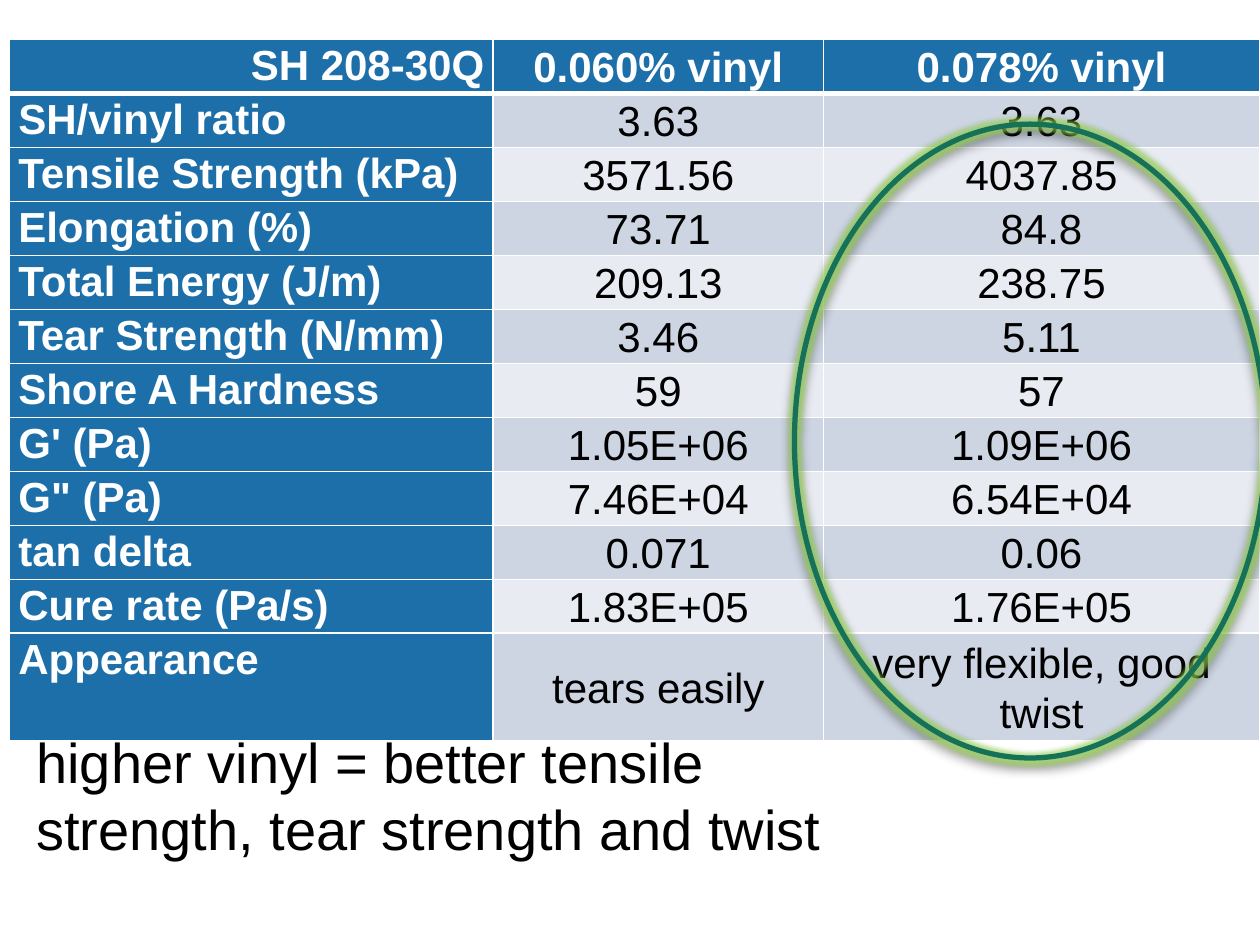
import pptx
import pptx.util
import pptx.oxml
import pptx.oxml.ns
import pptx.dml.color
import pptx.enum.shapes
import pptx.enum.text

Pt = pptx.util.Pt
Color = pptx.dml.color.RGBColor
Align = pptx.enum.text.PP_ALIGN
Anchor = pptx.enum.text.MSO_ANCHOR

WHITE = Color(0xFF, 0xFF, 0xFF)
BLACK = Color(0, 0, 0)
BLUE = Color(0x1D, 0x6F, 0xA9)
BANDS = Color(0xE8, 0xEB, 0xF1), Color(0xCD, 0xD5, 0xE2)
GREEN = Color(0x15, 0x72, 0x59)
LIME = Color(0x9A, 0xDC, 0x50)

SPACE = pptx.oxml.ns.nsdecls("a")

ROWS = [
    ("SH 208-30Q", "0.060% vinyl", "0.078% vinyl"),
    ("SH/vinyl ratio", "3.63", "3.63"),
    ("Tensile Strength (kPa)", "3571.56", "4037.85"),
    ("Elongation (%)", "73.71", "84.8"),
    ("Total Energy (J/m)", "209.13", "238.75"),
    ("Tear Strength (N/mm)", "3.46", "5.11"),
    ("Shore A Hardness", "59", "57"),
    ("G' (Pa)", "1.05E+06", "1.09E+06"),
    ('G" (Pa)', "7.46E+04", "6.54E+04"),
    ("tan delta", "0.071", "0.06"),
    ("Cure rate (Pa/s)", "1.83E+05", "1.76E+05"),
    ("Appearance", "tears easily", "very flexible, good twist"),
]
WIDTHS = 276.2, 189, 249


def write(frame, text, size=24, color=BLACK, bold=False, align=Align.LEFT, lead=None):
    par = frame.paragraphs[0]
    par.alignment = align
    par.line_spacing = lead
    run = par.add_run()
    run.text = text
    font = run.font
    font.name = "Arial"
    font.size = Pt(size)
    font.bold = bold
    font.color.rgb = color


class Deck:
    def __init__(self):
        self.show = pptx.Presentation()
        self.show.slide_width = Pt(720)
        self.show.slide_height = Pt(540)
        self.slide = self.show.slides.add_slide(self.show.slide_layouts[6])

    def edge(self, cell, side, width):
        cell._tc.get_or_add_tcPr().append(pptx.oxml.parse_xml(
            f'<a:{side} {SPACE} w="{Pt(width)}"><a:solidFill>'
            f'<a:srgbClr val="{WHITE}"/></a:solidFill></a:{side}>'))

    def cell(self, cell, text, row, col):
        head = row == 0 or col == 0
        cell.margin_left = cell.margin_right = Pt(5)
        cell.margin_top = cell.margin_bottom = 0
        cell.vertical_anchor = Anchor.MIDDLE if col else Anchor.TOP
        for side in ("lnL", "lnR", "lnT", "lnB"):
            thick = (row, side) in ((0, "lnB"), (1, "lnT"))
            self.edge(cell, side, 3 if thick else 1)
        cell.fill.solid()
        cell.fill.fore_color.rgb = BLUE if head else BANDS[row % 2]
        align = Align.CENTER if col else Align.LEFT if row else Align.RIGHT
        write(cell.text_frame, text, color=WHITE if head else BLACK,
              bold=head, align=align, lead=1.07)

    def table(self, left, top, rows, widths, step, last):
        high = step * (len(rows) - 1) + last
        grid = self.slide.shapes.add_table(
            len(rows), len(widths), Pt(left), Pt(top), Pt(sum(widths)), Pt(high)).table
        grid.first_col = True
        for col, wide in enumerate(widths):
            grid.columns[col].width = Pt(wide)
        for row, texts in enumerate(rows):
            grid.rows[row].height = Pt(step)
            for col, text in enumerate(texts):
                self.cell(grid.cell(row, col), text, row, col)
        grid.rows[len(rows) - 1].height = Pt(last)

    def ring(self, left, top, wide, high):
        ring = self.slide.shapes.add_shape(
            pptx.enum.shapes.MSO_SHAPE.OVAL, Pt(left), Pt(top), Pt(wide), Pt(high))
        ring.rotation = 90
        ring.fill.background()
        ring.line.color.rgb = GREEN
        ring.line.width = Pt(3)
        ring._element.spPr.append(pptx.oxml.parse_xml(
            f'<a:effectLst {SPACE}><a:glow rad="{Pt(5)}"><a:srgbClr val="{LIME}">'
            f'<a:alpha val="60000"/></a:srgbClr></a:glow>'
            f'<a:outerShdw blurRad="{Pt(4)}" dist="{Pt(3)}" dir="5400000" rotWithShape="0">'
            f'<a:srgbClr val="{BLACK}"><a:alpha val="40000"/></a:srgbClr>'
            f'</a:outerShdw></a:effectLst>'))

    def note(self, left, top, wide, high, text):
        frame = self.slide.shapes.add_textbox(
            Pt(left), Pt(top), Pt(wide), Pt(high)).text_frame
        frame.word_wrap = True
        frame.auto_size = pptx.enum.text.MSO_AUTO_SIZE.SHAPE_TO_FIT_TEXT
        write(frame, text, size=32)


def main():
    deck = Deck()
    deck.table(5.5, 22.6, ROWS, WIDTHS, 30.86, 61.6)
    deck.ring(407.5, 117.4, 362.2, 269.3)
    deck.note(13.7, 412, 498.2, 85,
              "higher vinyl = better tensile strength, tear strength and twist")
    deck.show.save("out.pptx")


if __name__ == "__main__":
    main()
